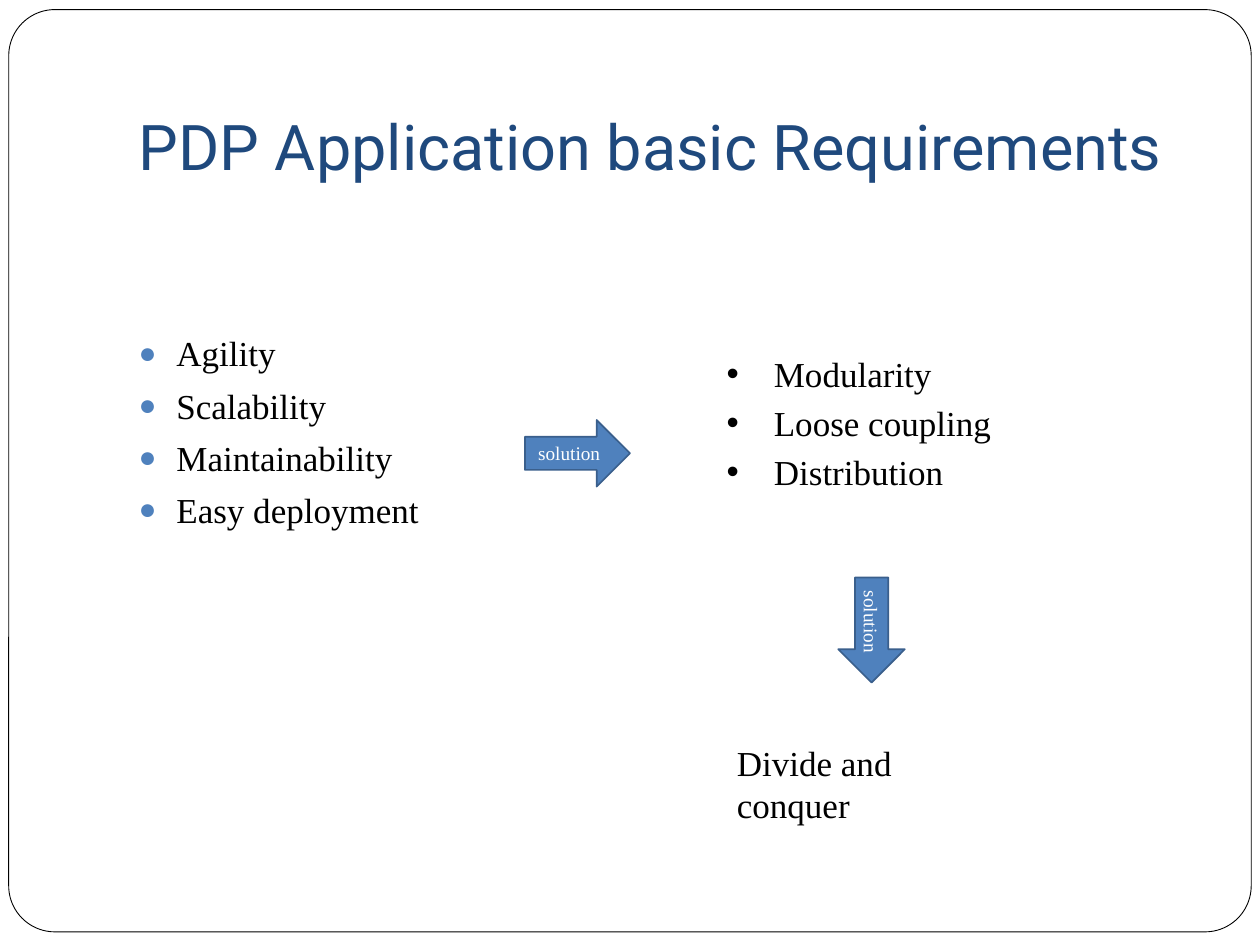
import pptx
import pptx.util
import pptx.dml.color
import pptx.enum.shapes
import pptx.enum.text
import pptx.oxml
import pptx.oxml.ns
import lxml.etree

Pt = pptx.util.Pt
RGB = pptx.dml.color.RGBColor.from_string
SHAPE = pptx.enum.shapes.MSO_SHAPE
ALIGN = pptx.enum.text.PP_ALIGN
ANCHOR = pptx.enum.text.MSO_ANCHOR
FIT = pptx.enum.text.MSO_AUTO_SIZE

# Content, boxes as (left, top, width, height) in points
TITLE = ("PDP Application basic Requirements", (72, 21.6, 612, 90))
LISTS = [
    dict(items=["Agility", "Scalability", "Maintainability", "Easy deployment"],
         box=(72, 186, 234, 198), indent=21.6, gap=5.8,
         mark="●", tint="blue", scale=85),
    dict(items=["Modularity", "Loose coupling", "Distribution"],
         box=(408, 198, 234, 126), indent=27, gap=4,
         mark="•", tint="ink", scale=100),
]
ARROWS = [("solution", (300, 240, 60, 38), 0),
          ("solution", (468, 341, 60, 38), 90)]
RESULT = ("Divide and conquer", (414, 420, 158, 31.5))
FRAME = (5, 5.5, 710, 527)

THEME = dict(
    ink="000000", paper="FFFFFF", navy="1F497D", blue="4F81BD", edge="3A5F8C",
    head="Roboto", text="Times New Roman", title=36, body=20, small=11)


def place(shape, box):
    shape.left, shape.top, shape.width, shape.height = map(Pt, box)


def style(frame, size, color="ink", font="text", align=ALIGN.LEFT):
    for para in frame.paragraphs:
        para.alignment = align
        for run in para.runs:
            run.font.name = THEME[font]
            run.font.size = Pt(THEME[size])
            run.font.color.rgb = RGB(THEME[color])


def draw(slide, kind, box, fill, line, weight):
    shape = slide.shapes.add_shape(kind, *map(Pt, box))
    shape.shadow.inherit = False
    shape.fill.solid()
    shape.fill.fore_color.rgb = RGB(THEME[fill])
    shape.line.color.rgb = RGB(THEME[line])
    shape.line.width = Pt(weight)
    return shape


def bullet(para, spec):
    para.space_before = Pt(spec["gap"])
    props = para._p.get_or_add_pPr()
    props.set("marL", str(Pt(spec["indent"])))
    props.set("indent", str(-Pt(spec["indent"])))
    qn = pptx.oxml.ns.qn
    color = lxml.etree.SubElement(props, qn("a:buClr"))
    lxml.etree.SubElement(color, qn("a:srgbClr"), val=THEME[spec["tint"]])
    lxml.etree.SubElement(props, qn("a:buSzPct"), val=str(spec["scale"] * 1000))
    lxml.etree.SubElement(props, qn("a:buFont"), typeface="Arial")
    lxml.etree.SubElement(props, qn("a:buChar"), char=spec["mark"])


def main():
    deck = pptx.Presentation()
    deck.slide_width, deck.slide_height = Pt(720), Pt(540)
    slide = deck.slides.add_slide(deck.slide_layouts.get_by_name("Two Content"))

    # Rounded frame, behind everything
    frame = draw(slide, SHAPE.ROUNDED_RECTANGLE, FRAME, "paper", "ink", 0.5)
    frame.adjustments[0] = 0.05
    frame.element.getparent().insert(2, frame.element)

    # Title
    words, box = TITLE
    title = slide.shapes.title
    place(title, box)
    text = title.text_frame
    text.text = words
    text.auto_size = FIT.NONE
    text.vertical_anchor = ANCHOR.BOTTOM
    text.margin_bottom = Pt(7.2)
    style(text, "title", "navy", "head")

    # Bullet lists
    for spec, body in zip(LISTS, list(slide.placeholders)[1:3]):
        place(body, spec["box"])
        text = body.text_frame
        text.text = "\n".join(spec["items"])
        text.auto_size = FIT.NONE
        style(text, "body")
        for para in text.paragraphs:
            bullet(para, spec)

    # Arrows
    for words, box, turn in ARROWS:
        arrow = draw(slide, SHAPE.RIGHT_ARROW, box, "blue", "edge", 1)
        arrow.rotation = turn
        text = arrow.text_frame
        text.text = words
        text.word_wrap = False
        text.vertical_anchor = ANCHOR.MIDDLE
        style(text, "small", "paper", align=ALIGN.CENTER)

    # Result
    words, box = RESULT
    text = slide.shapes.add_textbox(*map(Pt, box)).text_frame
    text.text = words
    text.word_wrap = True
    style(text, "body")

    deck.save("out.pptx")


if __name__ == "__main__":
    main()
